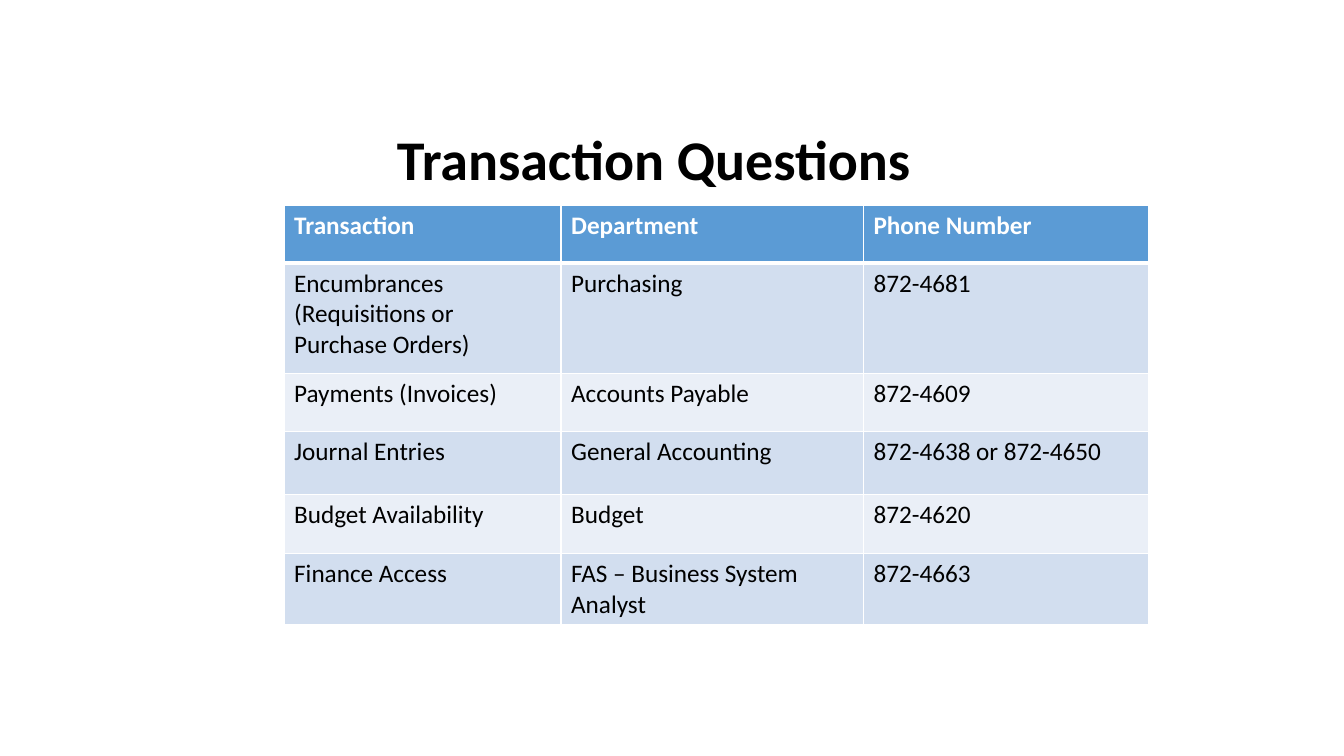
from lxml.etree import SubElement
from pptx import Presentation
from pptx.dml.color import RGBColor
from pptx.enum.text import MSO_ANCHOR, PP_ALIGN
from pptx.oxml.ns import qn
from pptx.util import Cm, Pt

BLACK = RGBColor(0x00, 0x00, 0x00)
WHITE = RGBColor(0xFF, 0xFF, 0xFF)
HEADER = RGBColor(0x5B, 0x9B, 0xD5)
BANDS = [RGBColor(0xEA, 0xEF, 0xF7), RGBColor(0xD2, 0xDE, 0xEF)]
FONT = "Calibri"

ROWS = [
    ("Transaction", "Department", "Phone Number"),
    ("Encumbrances (Requisitions or Purchase Orders)", "Purchasing", "872-4681"),
    ("Payments (Invoices)", "Accounts Payable", "872-4609"),
    ("Journal Entries", "General Accounting", "872-4638 or 872-4650"),
    ("Budget Availability", "Budget", "872-4620"),
    ("Finance Access", "FAS – Business System Analyst", "872-4663"),
]
COL_WIDTHS = [6.98, 7.62, 7.19]
ROW_HEIGHTS = [1.45, 2.79, 1.45, 1.6, 1.47, 1.47]


def add_run(p, text, size, color, bold):
    r = p.add_run()
    r.text = text
    r.font.name = FONT
    r.font.size = Pt(size)
    r.font.bold = bold
    r.font.color.rgb = color


def add_border(cell, side, width):
    ln = SubElement(cell._tc.get_or_add_tcPr(), qn(f"a:ln{side}"), w=str(Pt(width)))
    fill = SubElement(ln, qn("a:solidFill"))
    SubElement(fill, qn("a:srgbClr"), val=str(WHITE))


prs = Presentation()
prs.slide_width = Cm(33.87)
prs.slide_height = Cm(19.05)
s = prs.slides.add_slide(prs.slide_layouts[5])

title = s.shapes.title
title.left, title.top, title.width, title.height = Cm(9.75), Cm(3.1), Cm(22.86), Cm(1.96)
tf = title.text_frame
tf.word_wrap = True
tf.vertical_anchor = MSO_ANCHOR.MIDDLE
p = tf.paragraphs[0]
p.alignment = PP_ALIGN.LEFT
p.line_spacing = 0.9
add_run(p, "Transaction Questions", 40, BLACK, True)

table = s.shapes.add_table(
    len(ROWS), len(COL_WIDTHS), Cm(7.16), Cm(5.18),
    Cm(sum(COL_WIDTHS)), Cm(sum(ROW_HEIGHTS)),
).table
for col, width in zip(table.columns, COL_WIDTHS):
    col.width = Cm(width)
for row, height in zip(table.rows, ROW_HEIGHTS):
    row.height = Cm(height)

for i, texts in enumerate(ROWS):
    is_header = i == 0
    for j, text in enumerate(texts):
        cell = table.cell(i, j)
        for side in "LRTB":
            thick = (is_header and side == "B") or (i == 1 and side == "T")
            add_border(cell, side, 3 if thick else 1)
        cell.fill.solid()
        cell.fill.fore_color.rgb = HEADER if is_header else BANDS[i % 2]
        p = cell.text_frame.paragraphs[0]
        add_run(p, text, 18, WHITE if is_header else BLACK, is_header)

prs.save("out.pptx")
